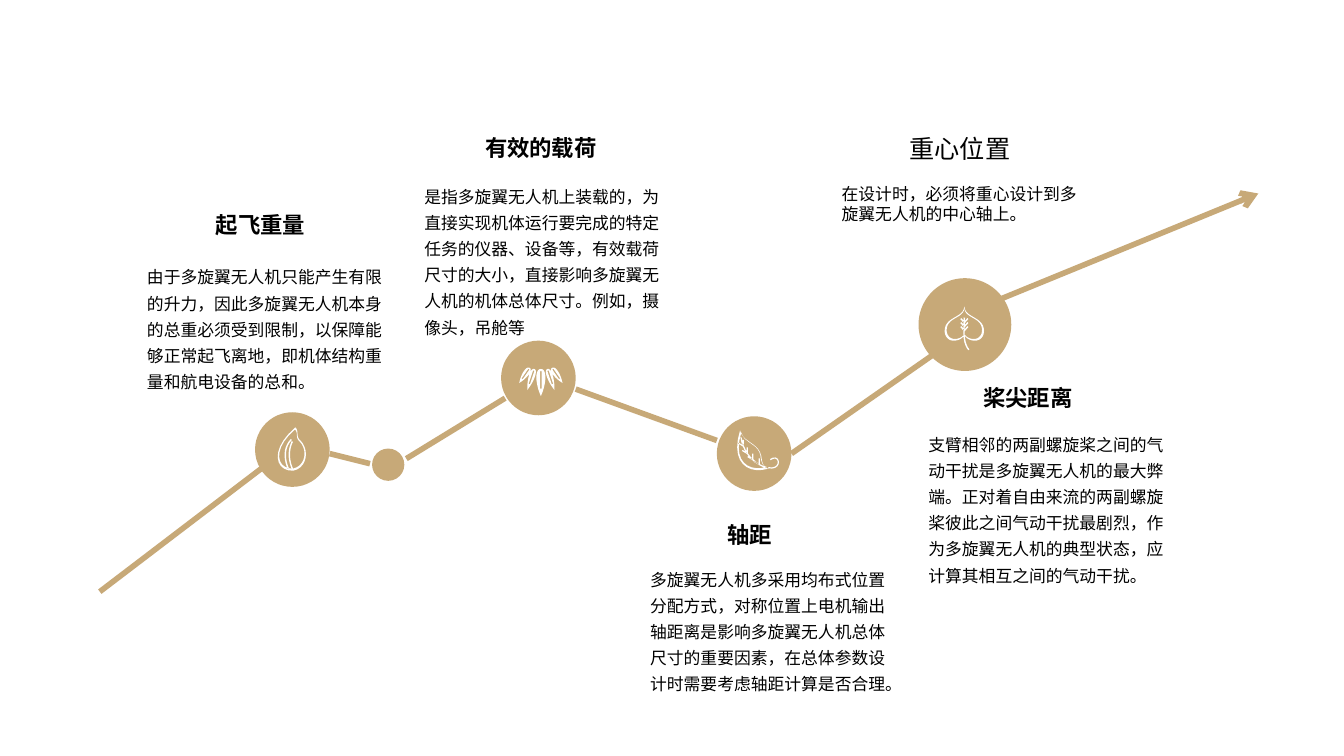
from dataclasses import dataclass
from lxml.etree import SubElement as Sub
from pptx import Presentation
from pptx.dml.color import RGBColor as Rgb
from pptx.enum.shapes import MSO_CONNECTOR as Link, MSO_SHAPE as Kind
from pptx.enum.text import PP_ALIGN as Align
from pptx.oxml.ns import qn
from pptx.util import Inches, Pt


@dataclass(frozen=True)
class Theme:
    gold: Rgb = Rgb.from_string("C7A978")
    white: Rgb = Rgb.from_string("FFFFFF")
    ink: Rgb = Rgb.from_string("000000")
    font: str = "Noto Sans CJK SC"
    latin: str = "Calibri"
    head: int = 16
    lead: int = 18
    body: int = 12
    line: int = 4


LOOK = Theme()

STAGES = [
    ("起飞重量", (1.82, 2.05, 1.53, 0.37),
     "由于多旋翼无人机只能产生有限的升力，因此多旋翼无人机本身的总重必须受到限制，以保障能够正常起飞离地，即机体结构重量和航电设备的总和。",
     (1.36, 2.54, 2.54, 1.39)),
    ("有效的载荷", (4.6, 1.28, 1.53, 0.37),
     "是指多旋翼无人机上装载的，为直接实现机体运行要完成的特定任务的仪器、设备等，有效载荷尺寸的大小，直接影响多旋翼无人机的机体总体尺寸。例如，摄像头，吊舱等",
     (4.11, 1.74, 2.54, 1.66)),
    ("轴距", (6.45, 5.12, 1.97, 0.37),
     "多旋翼无人机多采用均布式位置分配方式，对称位置上电机输出轴距离是影响多旋翼无人机总体尺寸的重要因素，在总体参数设计时需要考虑轴距计算是否合理。",
     (6.35, 5.54, 2.54, 1.39)),
    ("桨尖距离", (9.21, 3.76, 1.97, 0.37),
     "支臂相邻的两副螺旋桨之间的气动干扰是多旋翼无人机的最大弊端。正对着自由来流的两副螺旋桨彼此之间气动干扰最剧烈，作为多旋翼无人机的典型状态，应计算其相互之间的气动干扰。",
     (9.11, 4.2, 2.54, 1.66)),
]
CENTER = ("重心位置", "在设计时，必须将重心设计到多旋翼无人机的中心轴上。", (8.25, 1.27, 2.54, 1.01))

ROUTE = [
    (0.99, 5.87, 2.59, 4.65), (3.27, 4.5, 3.67, 4.6), (4.03, 4.55, 5.01, 3.95),
    (5.71, 3.86, 7.11, 4.37), (7.85, 4.5, 9.24, 3.53), (9.94, 2.96, 12.48, 1.92),
]
DOTS = [
    (3.69, 4.45, 0.32), (9.11, 2.76, 0.92), (7.11, 4.13, 0.74),
    (4.97, 3.38, 0.74), (2.53, 4.09, 0.74),
]


def bend(start, pull, push, end, steps=10):
    """Sample a cubic curve; a point is x + y·j in hundredths of an inch."""
    marks = [step / steps for step in range(steps + 1)]
    return [(1 - t) ** 3 * start + 3 * (1 - t) ** 2 * t * pull
            + 3 * (1 - t) * t ** 2 * push + t ** 3 * end for t in marks]


def flip(ring, width):
    """Mirror a ring left to right within a width."""
    return [complex(width - dot.real, dot.imag) for dot in reversed(ring)]


def band(ring, thick=0.9):
    """Return an outline and the smaller copy that hollows it."""
    xs, ys = [dot.real for dot in ring], [dot.imag for dot in ring]
    mid = complex(min(xs) + max(xs), min(ys) + max(ys)) / 2
    return [ring, [mid + (dot - mid) * thick for dot in ring]]


def vein(line, wide=1.4):
    """Turn a line into a thin strip by moving each point along its normal."""
    ways = [far - near for near, far in zip(line[:1] + line, line[1:] + line[-1:])]
    sides = [way / abs(way) * 1j * wide / 2 for way in ways]
    left = [dot + side for dot, side in zip(line, sides)]
    right = [dot - side for dot, side in zip(line, sides)]
    return left + right[::-1]


def petal(top, tip, bulge):
    """Return a pointed petal and its slit."""
    axis = tip - top
    side = axis / abs(axis) * 1j * bulge
    half = bend(top, top + side, top + 0.5 * axis + side, tip)
    back = bend(tip, top + 0.5 * axis - side, top - side, top)
    return [half + back, vein([top + 0.08 * axis, top + 0.72 * axis])]


def seed():
    """Draw a seed with two inner ribs."""
    skin = (bend(18, 22 + 4j, 18 + 9j, 23 + 13j)
            + bend(23 + 13j, 32 + 22j, 30 + 40j, 16 + 43j)
            + bend(16 + 43j, -2 + 44j, -8 + 22j, 18))
    ribs = [bend(14 + 12j, 6 + 20j, 7 + 32j, 11 + 41j),
            bend(15 + 14j, 11 + 22j, 11 + 32j, 15 + 41j)]
    return band(skin) + [vein(rib) for rib in ribs]


def fan():
    """Draw five petals, the outer pairs mirrored."""
    right = petal(28 + 1j, 35 + 22j, 4) + petal(32.5, 43 + 15j, 4)
    return petal(21.5 + 1j, 21.5 + 28j, 6) + right + [flip(ring, 43) for ring in right]


def leaf():
    """Draw a leaf with a curled stalk and paired veins."""
    skin = (bend(4, 7 + 12j, 22 + 12j, 25 + 25j)
            + bend(25 + 25j, 26 + 34j, 28 + 37j, 32 + 38j)
            + bend(32 + 38j, 12 + 44j, -6 + 32j, 4))
    stalk = bend(32 + 37j, 46 + 40j, 44 + 22j, 34 + 29j)
    spine = bend(5 + 7j, 7 + 22j, 18 + 33j, 30 + 37j)
    twigs = [[root, root + way] for root in spine[2:9:2] for way in (-6j, -5 - 3j)]
    return band(skin) + [vein(line, 1.2) for line in [stalk, spine] + twigs]


def heart():
    """Draw a heart-shaped leaf with a stem and mirrored veins."""
    half = (bend(19.5, 20 + 10j, 34 + 10j, 38 + 19j)
            + bend(38 + 19j, 41 + 27j, 37 + 34j, 30 + 34j)
            + bend(30 + 34j, 26 + 34j, 21 + 32j, 19.5 + 28j))
    stem = bend(19.5 + 11j, 19 + 25j, 18 + 36j, 24 + 43j)
    twigs = [vein([19.5 + (y + 4) * 1j, 23 + y * 1j]) for y in (12, 16, 20)]
    return (band(half + flip(half, 39)) + [vein(stem)] + twigs
            + [flip(twig, 39) for twig in twigs])


ICONS = [(7.3, 4.27, leaf), (5.15, 3.65, fan), (2.75, 4.24, seed), (9.37, 3.04, heart)]


def paint(shape, color):
    """Give a shape a plain fill with no line or shadow."""
    shape.shadow.inherit = False
    shape.fill.solid()
    shape.fill.fore_color.rgb = color
    shape.line.fill.background()


def frame(slide, box):
    """Add a wrapping text box and return its text frame."""
    area = slide.shapes.add_textbox(*map(Inches, box)).text_frame
    area.word_wrap = True
    return area


def write(para, text, size=LOOK.body, font=LOOK.font, bold=False, align=Align.LEFT,
          lead=None, after=0):
    """Write one formatted run into a paragraph."""
    para.alignment = align
    para.space_after = Pt(after)
    if lead:
        para.line_spacing = lead
    run = para.add_run()
    run.text = text
    run.font.size = Pt(size)
    run.font.name = font
    run.font.bold = bold
    run.font.color.rgb = LOOK.ink
    Sub(run._r.rPr, qn("a:ea"), typeface=LOOK.font)


def link(slide, ends, arrow):
    """Draw one leg of the route."""
    leg = slide.shapes.add_connector(Link.STRAIGHT, *map(Inches, ends))
    leg.line.color.rgb = LOOK.gold
    leg.line.width = Pt(LOOK.line)
    props = leg._element.spPr
    if arrow:
        Sub(props.find(qn("a:ln")), qn("a:tailEnd"), type="arrow")
    Sub(props, qn("a:effectLst"))


def icon(slide, left, top, rings):
    """Draw rings as one white shape."""
    first, *rest = [[(Inches(dot.real / 100), Inches(dot.imag / 100)) for dot in ring]
                    for ring in rings]
    pen = slide.shapes.build_freeform(*first[0])
    pen.add_line_segments(first[1:], close=True)
    for ring in rest:
        pen.move_to(*ring[0])
        pen.add_line_segments(ring[1:], close=True)
    paint(pen.convert_to_shape(Inches(left), Inches(top)), LOOK.white)


def main():
    """Build the slide and save it."""
    deck = Presentation()
    deck.slide_width, deck.slide_height = Inches(13.33), Inches(7.5)
    slide = deck.slides.add_slide(deck.slide_layouts[6])
    for ends in ROUTE:
        link(slide, ends, ends == ROUTE[-1])
    for x, y, size in DOTS:
        kind = Kind.FLOWCHART_CONNECTOR if size < 0.5 else Kind.OVAL
        paint(slide.shapes.add_shape(kind, *map(Inches, (x, y, size, size))), LOOK.gold)
    for head, spot, body, box in STAGES:
        title = frame(slide, spot).paragraphs[0]
        write(title, head, size=LOOK.head, bold=True, align=Align.CENTER)
        write(frame(slide, box).paragraphs[0], body, lead=1.3)
    for left, top, draw in ICONS:
        icon(slide, left, top, draw())
    head, body, box = CENTER
    area = frame(slide, box)
    write(area.paragraphs[0], head, size=LOOK.lead, font=LOOK.latin, align=Align.CENTER,
          after=14.5)
    write(area.add_paragraph(), body)
    deck.save("out.pptx")


if __name__ == "__main__":
    main()
